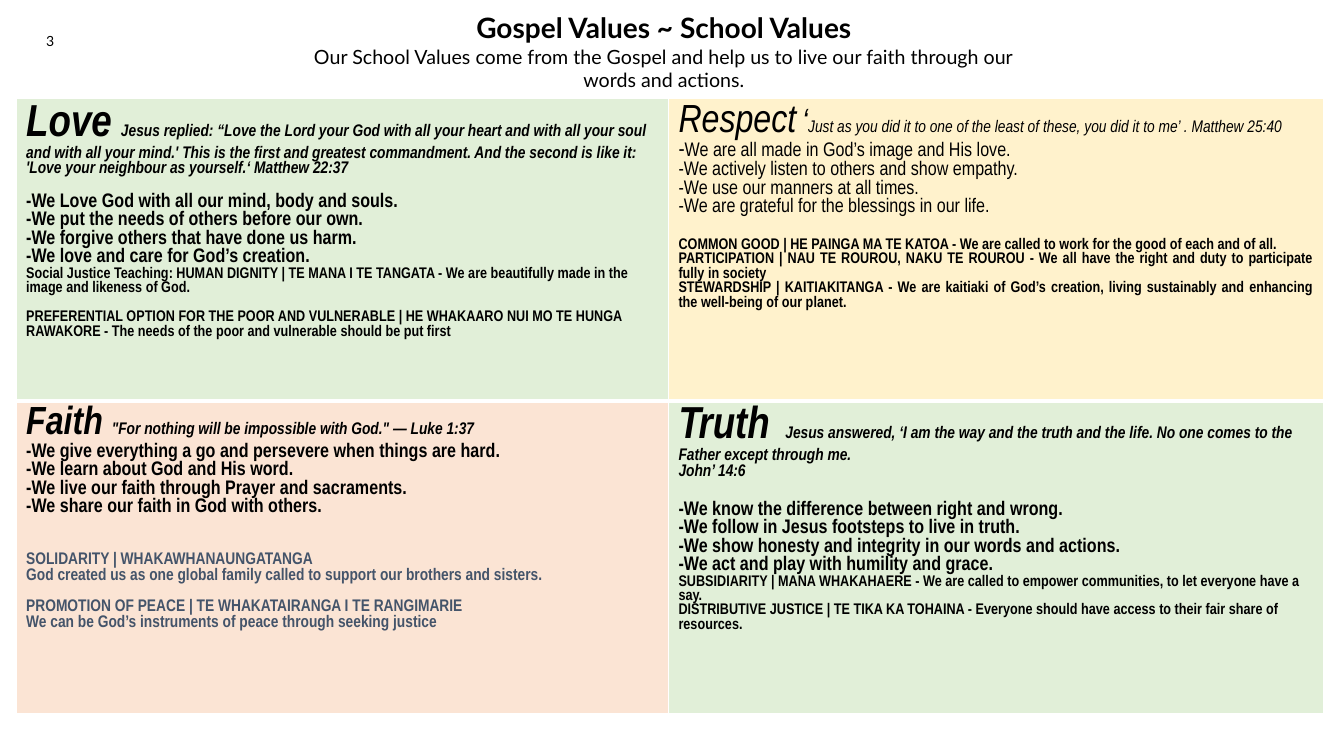
from pptx import Presentation
from pptx import util as u
from pptx.dml.color import RGBColor
from pptx.enum import text
from pptx.oxml import parse_xml
from pptx.oxml.ns import nsdecls

THEME = {
    "ink": "000000", "slate": "44546A", "rule": "FFFFFF",
    "green": "E1EFD8", "yellow": "FFF2CC", "peach": "FBE4D4",
    "body_font": "Arial Narrow", "title_font": "Lato",
    "title": 20, "hero": 32, "head": 28, "quote_mark": 24, "lead": 18,
    "dash": 16, "value": 14, "verse": 12, "teaching": 11, "number": 10,
}


def add_span(para, words, size="value", bold=True, italic=False, color="ink", font="body_font"):
    span = para.add_run()
    span.text = words
    span.font.size = u.Pt(THEME[size])
    span.font.bold = bold
    span.font.italic = italic
    span.font.name = THEME[font]
    span.font.color.rgb = RGBColor.from_string(THEME[color])


def add_para(frame, spans, before=0, align=text.PP_ALIGN.LEFT, **style):
    first = frame.paragraphs[0]
    para = frame.add_paragraph() if first.runs else first
    para.alignment = align
    if before:
        para.space_before = u.Pt(before)
    for words, changes in spans:
        add_span(para, words, **{**style, **changes})


deck = Presentation()
deck.slide_width, deck.slide_height = u.Inches(13.33), u.Inches(7.5)
page = deck.slides.add_slide(deck.slide_layouts[6])
column = deck.slide_width / 100
row = deck.slide_height / 100

VERSE = {"size": "verse", "italic": True}
TEACHING = {"size": "teaching"}
PLAIN = {"bold": False}
SLATE = {"size": "verse", "color": "slate"}
JUSTIFY = text.PP_ALIGN.JUSTIFY
LEFT = text.PP_ALIGN.LEFT

love = [
    (0, VERSE, [("Love", {"size": "hero"}), (" ", {"size": "head"}),
                ("Jesus replied: “Love the Lord your God with all your heart and with all your soul "
                 "and with all your mind.' This is the first and greatest commandment. "
                 "And the second is like it: 'Love your neighbour as yourself.‘ Matthew 22:37", {})]),
    (11, {}, "-We Love God with all our mind, body and souls."),
    (0, {}, "-We put the needs of others before our own."),
    (0, {}, "-We forgive others that have done us harm."),
    (0, {}, "-We love and care for God’s creation."),
    (0, TEACHING, "Social Justice Teaching: HUMAN DIGNITY | TE MANA I TE TANGATA - "
                  "We are beautifully made in the image and likeness of God."),
    (10.5, TEACHING, "PREFERENTIAL OPTION FOR THE POOR AND VULNERABLE | HE WHAKAARO NUI MO TE HUNGA "
                     "RAWAKORE - The needs of the poor and vulnerable should be put first"),
]
respect = [
    (0, {**VERSE, **PLAIN}, [
        ("Respect", {"size": "head"}), (" ", {"size": "lead"}), ("‘", {"size": "quote_mark"}),
        ("Just as you did it to one of the least of these, you did it to me’ . Matthew 25:40", {})]),
    (0, PLAIN, [("-", {"size": "dash"}), ("We are all made in God’s image and His love.", {})]),
    (0, PLAIN, "-We actively listen to others and show empathy."),
    (0, PLAIN, "-We use our manners at all times."),
    (0, PLAIN, "-We are grateful for the blessings in our life."),
    (15, TEACHING, "COMMON GOOD | HE PAINGA MA TE KATOA - "
                   "We are called to work for the good of each and of all."),
    (0, TEACHING, "PARTICIPATION | NAU TE ROUROU, NAKU TE ROUROU - "
                  "We all have the right and duty to participate fully in society"),
    (0, TEACHING, "STEWARDSHIP | KAITIAKITANGA - We are kaitiaki of God’s creation, "
                  "living sustainably and enhancing the well-being of our planet."),
]
faith = [
    (0, VERSE, [("Faith ", {"size": "head"}),
                ("\"For nothing will be impossible with God.\" — Luke 1:37", {})]),
    (0, {}, "-We give everything a go and persevere when things are hard."),
    (0, {}, "-We learn about God and His word."),
    (0, {}, "-We live our faith through Prayer and sacraments."),
    (0, {}, "-We share our faith in God with others."),
    (25, SLATE, "SOLIDARITY | WHAKAWHANAUNGATANGA"),
    (0, SLATE, "God created us as one global family called to support our brothers and sisters."),
    (11, SLATE, "PROMOTION OF PEACE | TE WHAKATAIRANGA I TE RANGIMARIE"),
    (0, SLATE, "We can be God’s instruments of peace through seeking justice"),
]
truth = [
    (0, VERSE, [("Truth ", {"size": "hero"}), (" ", {"size": "dash"}),
                ("Jesus answered, ‘I am the way and the truth and the life. "
                 "No one comes to the Father except through me.", {})]),
    (0, VERSE, "John’ 14:6"),
    (15, {}, "-We know the difference between right and wrong."),
    (0, {}, "-We follow in Jesus footsteps to live in truth."),
    (0, {}, "-We show honesty and integrity in our words and actions."),
    (0, {}, "-We act and play with humility and grace."),
    (0, TEACHING, "SUBSIDIARITY | MANA WHAKAHAERE - "
                  "We are called to empower communities, to let everyone have a say."),
    (0, TEACHING, "DISTRIBUTIVE JUSTICE | TE TIKA KA TOHAINA - "
                  "Everyone should have access to their fair share of resources."),
]
values = [
    [(love, "green", LEFT), (respect, "yellow", JUSTIFY)],
    [(faith, "peach", LEFT), (truth, "green", LEFT)],
]

frame_shape = page.shapes.add_table(2, 2, int(1.2 * column), int(13.07 * row),
                                    int(97.3 * column), int(81.33 * row))
table = frame_shape.table
table.first_row = table.horz_banding = False
for index, share in enumerate((48.54, 48.76)):
    table.columns[index].width = int(share * column)
for index, share in enumerate((40, 41.33)):
    table.rows[index].height = int(share * row)

for r, line in enumerate(values):
    for c, (paragraphs, fill, align) in enumerate(line):
        cell = table.cell(r, c)
        for before, style, spans in paragraphs:
            if isinstance(spans, str):
                spans = [(spans, {})]
            add_para(cell.text_frame, spans, before, align, **style)
        borders = {"lnL": 1, "lnR": 1, "lnT": 3 if r else 1, "lnB": 1 if r else 3}
        for side, width in borders.items():
            cell._tc.get_or_add_tcPr().append(parse_xml(
                f'<a:{side} {nsdecls("a")} w="{u.Pt(width)}"><a:solidFill>'
                f'<a:srgbClr val="{THEME["rule"]}"/></a:solidFill></a:{side}>'))
        cell.fill.solid()
        cell.fill.fore_color.rgb = RGBColor.from_string(THEME[fill])

title_box = page.shapes.add_textbox(int(1.8 * column), int(0.8 * row),
                                    int(95.2 * column), int(12.4 * row))
title_box.text_frame.word_wrap = True
for words, size, bold in (
    ("Gospel Values ~ School Values", "title", True),
    ("Our School Values come from the Gospel and help us to live our faith through our", "value", False),
    ("words and actions.", "value", False),
):
    add_para(title_box.text_frame, [(words, {})], align=text.PP_ALIGN.CENTER,
             size=size, bold=bold, font="title_font")

number_box = page.shapes.add_textbox(int(2.7 * column), int(3.73 * row),
                                     int(6.23 * column), int(3.33 * row))
number_box.text_frame.word_wrap = True
number_box.text_frame.vertical_anchor = text.MSO_ANCHOR.MIDDLE
add_para(number_box.text_frame, [("3", {})], size="number", bold=False, font="title_font")

deck.save("out.pptx")
